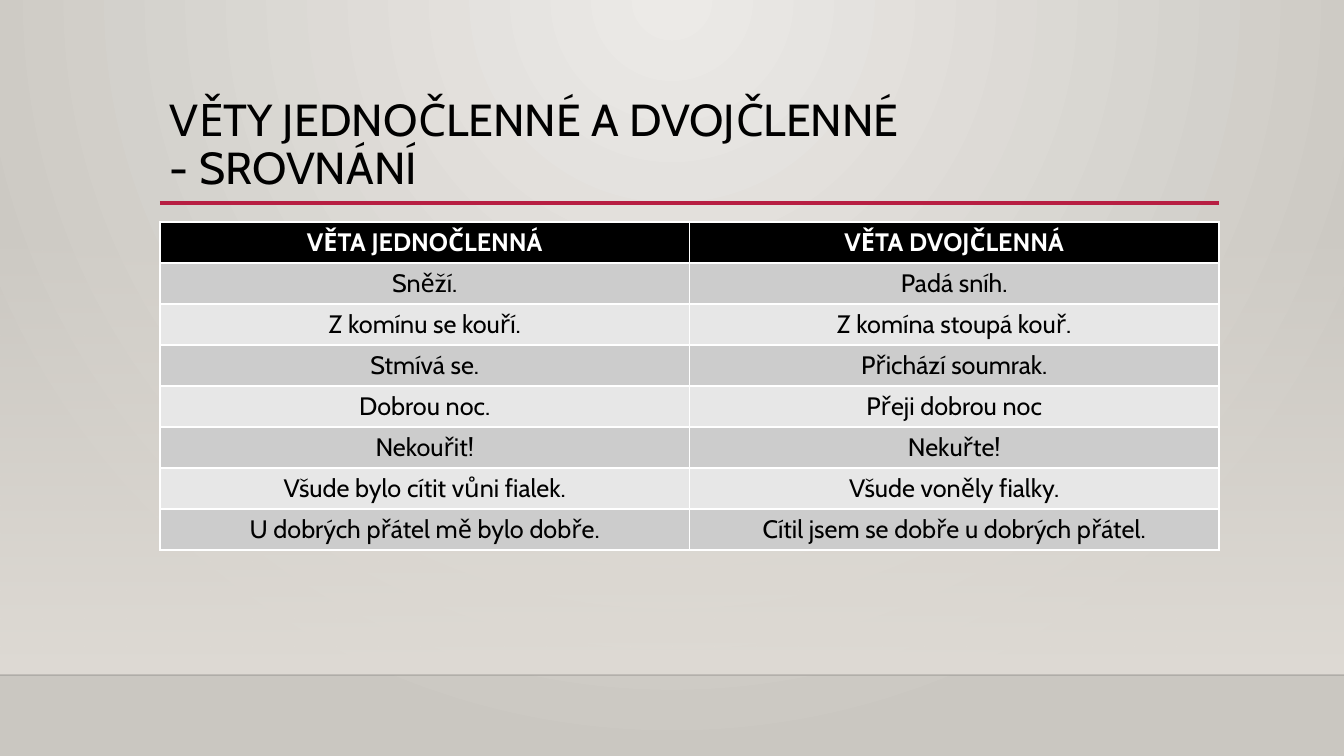
import pptx
import pptx.util
import pptx.dml.color
import pptx.enum.shapes
import pptx.enum.text
import pptx.oxml.ns
import pptx.oxml.xmlchemy

EMU_PER_PX = 914400 / 100.8
SLIDE_W, SLIDE_H = 1344, 756
FONT = "Cabin"
COLORS = {
    "glow": "ECEAE7",
    "edge": "CAC7C1",
    "wall": "DFDBD5",
    "floor_line": "000001",
    "accent": "B71E42",
    "text": "000000",
    "header": "000000",
    "header_text": "FFFFFF",
    "band_dark": "CCCCCC",
    "band_light": "E7E7E7",
}
SENTENCES = [
    ("VĚTA JEDNOČLENNÁ", "VĚTA DVOJČLENNÁ"),
    ("Sněží.", "Padá sníh."),
    ("Z komínu se kouří.", "Z komína stoupá kouř."),
    ("Stmívá se.", "Přichází soumrak."),
    ("Dobrou noc.", "Přeji dobrou noc"),
    ("Nekouřit!", "Nekuřte!"),
    ("Všude bylo cítit vůni fialek.", "Všude voněly fialky."),
    ("U dobrých přátel mě bylo dobře.", "Cítil jsem se dobře u dobrých přátel."),
]


def px(*lengths):
    return [pptx.util.Emu(round(length * EMU_PER_PX)) for length in lengths]


def color(name):
    return pptx.dml.color.RGBColor.from_string(COLORS[name])


def add_child(parent, tag, **attributes):
    child = pptx.oxml.xmlchemy.OxmlElement(tag)
    for key, value in attributes.items():
        child.set(key, str(value))
    parent.append(child)
    return child


def find(element, tag):
    return element.find(".//" + pptx.oxml.ns.qn(tag))


def set_gradient(fill, start, end):
    fill.gradient()
    for stop, name in zip(fill.gradient_stops, (start, end)):
        stop.color.rgb = color(name)


def format_runs(paragraph, size, name, bold=False):
    for run in paragraph.runs:
        run.font.name = FONT
        run.font.size = pptx.util.Pt(size)
        run.font.bold = bold
        run.font.color.rgb = color(name)


def paint_background(slide):
    set_gradient(slide.background.fill, "glow", "edge")
    gradient = find(slide.element, "a:gradFill")
    gradient.remove(find(gradient, "a:lin"))
    circle = add_child(gradient, "a:path", path="circle")
    add_child(circle, "a:fillToRect", l=43000, t=0, r=43000, b=100000)


def add_wall(slide, left, top, width, height):
    wall = slide.shapes.add_shape(
        pptx.enum.shapes.MSO_SHAPE.RECTANGLE, *px(left, top, width, height))
    wall.shadow.inherit = False
    wall.line.fill.background()
    set_gradient(wall.fill, "wall", "wall")
    wall.fill.gradient_angle = 270
    # The wall fades in from a clear top edge
    add_child(find(wall.element.spPr, "a:srgbClr"), "a:alpha", val=0)


def add_rule(slide, left, right, y, name, weight, opacity=100):
    rule = slide.shapes.add_connector(
        pptx.enum.shapes.MSO_CONNECTOR.STRAIGHT, *px(left, y, right, y))
    rule.line.color.rgb = color(name)
    rule.line.width = pptx.util.Pt(weight)
    if opacity < 100:
        add_child(find(rule.line._ln, "a:srgbClr"), "a:alpha", val=opacity * 1000)
    add_child(rule._element.spPr, "a:effectLst")


def add_title(slide, text, left, top, width, height):
    frame = slide.shapes.add_textbox(*px(left, top, width, height)).text_frame
    frame.word_wrap = True
    frame.vertical_anchor = pptx.enum.text.MSO_ANCHOR.MIDDLE
    heading = frame.paragraphs[0]
    heading.text = text
    heading.line_spacing = 0.9
    format_runs(heading, 32, "text")


def add_comparison(slide, rows, left, top, width, row_height):
    comparison = slide.shapes.add_table(
        len(rows), len(rows[0]),
        *px(left, top, width, row_height * len(rows))).table
    for r, sentences in enumerate(rows):
        is_header = r == 0
        band = "header" if is_header else "band_dark" if r % 2 else "band_light"
        for c, sentence in enumerate(sentences):
            cell = comparison.cell(r, c)
            cell.fill.solid()
            cell.fill.fore_color.rgb = color(band)
            paragraph = cell.text_frame.paragraphs[0]
            paragraph.text = sentence
            paragraph.alignment = pptx.enum.text.PP_ALIGN.CENTER
            format_runs(paragraph, 18, "header_text" if is_header else "text", is_header)


def main():
    deck = pptx.Presentation()
    deck.slide_width, deck.slide_height = px(SLIDE_W, SLIDE_H)
    slide = deck.slides.add_slide(deck.slide_layouts[6])

    # Backdrop: wall, floor edge and title rule
    paint_background(slide)
    add_wall(slide, 0, 223, SLIDE_W, 452)
    add_rule(slide, 0, SLIDE_W, 675, "floor_line", 1, opacity=20)
    add_rule(slide, 160, 1219, 203, "accent", 2.5)

    # Content
    add_title(slide, "VĚTY JEDNOČLENNÉ A DVOJČLENNÉ\v- SROVNÁNÍ", 160, 88, 1059, 116)
    add_comparison(slide, SENTENCES, 160, 222, 1059, 41)

    deck.save("out.pptx")


if __name__ == "__main__":
    main()
